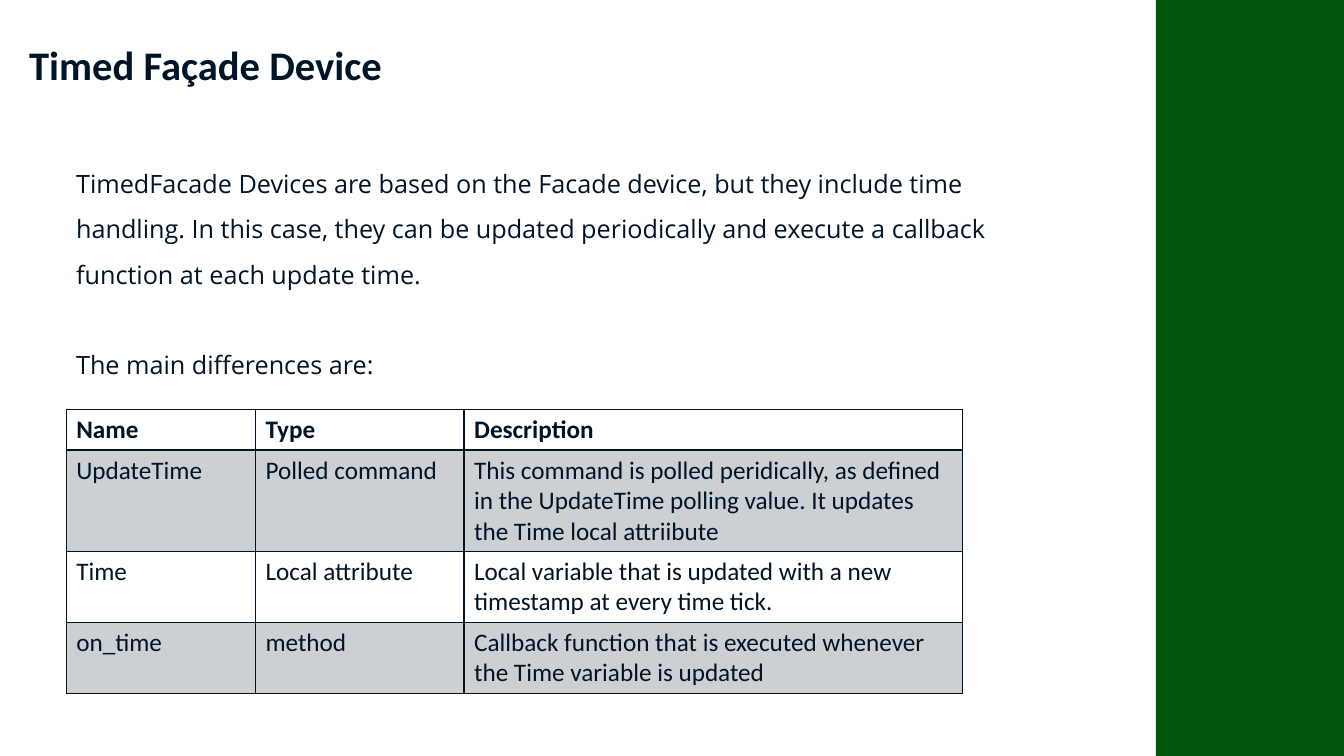
from dataclasses import dataclass

from lxml import etree
from pptx import Presentation
from pptx.dml.color import RGBColor
from pptx.enum.shapes import MSO_SHAPE
from pptx.enum.text import MSO_AUTO_SIZE
from pptx.oxml.ns import qn
from pptx.slide import Slide
from pptx.table import _Cell
from pptx.text.text import _Paragraph
from pptx.util import Pt

RECTANGLE = MSO_SHAPE.RECTANGLE
GROW = MSO_AUTO_SIZE.SHAPE_TO_FIT_TEXT
COLORS = {"ink": "001427", "band": "00570C"}
HEADING_FONT, BODY_FONT = "Calibri", "Open Sans"
SLIDE_WIDTH, SLIDE_HEIGHT = 960, 540
BAND_LEFT = 825.7
COLUMN_WIDTHS = (135.2, 149, 355.8)
HEADER_HEIGHT, EXTRA_LINE = 29.2, 21.5
BORDER_SIDES = ("a:lnL", "a:lnR", "a:lnT", "a:lnB")


@dataclass
class TextBlock:
    left: float
    top: float
    width: float
    height: float
    paragraphs: tuple[str, ...]
    font: str
    size: float
    line_spacing: float
    gap: float = 0
    bold: bool = False
    wrap: bool = True


@dataclass
class Row:
    cells: tuple[str, str, str]
    lines: int
    header: bool = False
    shaded: bool = False


TITLE = TextBlock(13.7, 28.8, 268.6, 38.9, ("Timed Façade Device",),
                  HEADING_FONT, 29, 0.9, bold=True, wrap=False)
INTRO = TextBlock(47.3, 105.8, 712.8, 167, (
    "TimedFacade Devices are based on the Facade device, but they include time "
    "handling. In this case, they can be updated periodically and execute a "
    "callback function at each update time.",
    "The main differences are:",
), BODY_FONT, 18, 1.5, gap=32.4)
ROWS = (
    Row(("Name", "Type", "Description"), 1, header=True),
    Row(("UpdateTime", "Polled command",
         "This command is polled peridically, as defined in the UpdateTime "
         "polling value. It updates the Time local attriibute"), 3, shaded=True),
    Row(("Time", "Local attribute",
         "Local variable that is updated with a new timestamp at every time tick."), 2),
    Row(("on_time", "method",
         "Callback function that is executed whenever the Time variable is updated"),
        2, shaded=True),
)


def style_runs(paragraph: _Paragraph, font: str, size: float, bold: bool) -> None:
    for run in paragraph.runs:
        run.font.name = font
        run.font.size = Pt(size)
        run.font.bold = bold
        run.font.color.rgb = RGBColor.from_string(COLORS["ink"])


def add_side_band(slide: Slide) -> None:
    band = slide.shapes.add_shape(RECTANGLE, Pt(BAND_LEFT), Pt(0),
                                  Pt(SLIDE_WIDTH - BAND_LEFT), Pt(SLIDE_HEIGHT))
    band.shadow.inherit = False
    band.fill.solid()
    band.fill.fore_color.rgb = RGBColor.from_string(COLORS["band"])
    band.line.fill.background()


def add_text_block(slide: Slide, block: TextBlock) -> None:
    box = slide.shapes.add_textbox(Pt(block.left), Pt(block.top),
                                   Pt(block.width), Pt(block.height))
    frame = box.text_frame
    frame.word_wrap = block.wrap
    frame.auto_size = GROW
    frame.text = "\n".join(block.paragraphs)
    for index, paragraph in enumerate(frame.paragraphs):
        paragraph.line_spacing = block.line_spacing
        if index:
            paragraph.space_before = Pt(block.gap)
        style_runs(paragraph, block.font, block.size, block.bold)


def set_borders(cell: _Cell, bottom_width: float) -> None:
    """Outline the cell in ink, 1 pt wide except along the bottom."""
    properties = cell._tc.get_or_add_tcPr()
    for position, side in enumerate(BORDER_SIDES):
        width = bottom_width if side == "a:lnB" else 1
        line = etree.Element(qn(side), w=str(Pt(width)))
        fill = etree.SubElement(line, qn("a:solidFill"))
        etree.SubElement(fill, qn("a:srgbClr"), val=COLORS["ink"])
        properties.insert(position, line)


def shade(cell: _Cell) -> None:
    """Fill the cell with ink at 20 % opacity."""
    cell.fill.solid()
    cell.fill.fore_color.rgb = RGBColor.from_string(COLORS["ink"])
    color = cell._tc.tcPr.find(qn("a:solidFill")).find(qn("a:srgbClr"))
    etree.SubElement(color, qn("a:alpha"), val="20000")


def add_differences_table(slide: Slide) -> None:
    heights = [HEADER_HEIGHT + EXTRA_LINE * (row.lines - 1) for row in ROWS]
    table = slide.shapes.add_table(len(ROWS), len(COLUMN_WIDTHS), Pt(47.3), Pt(292.3),
                                   Pt(sum(COLUMN_WIDTHS)), Pt(sum(heights))).table
    table.first_row = table.horz_banding = False
    for column, width in zip(table.columns, COLUMN_WIDTHS):
        column.width = Pt(width)
    for table_row, height, row in zip(table.rows, heights, ROWS):
        table_row.height = Pt(height)
        for cell, text in zip(table_row.cells, row.cells):
            cell.text_frame.text = text
            style_runs(cell.text_frame.paragraphs[0], HEADING_FONT, 18, row.header)
            if row.shaded:
                shade(cell)
            else:
                cell.fill.background()
            set_borders(cell, 2 if row.header else 1)


def main() -> None:
    presentation = Presentation()
    presentation.slide_width = Pt(SLIDE_WIDTH)
    presentation.slide_height = Pt(SLIDE_HEIGHT)
    slide = presentation.slides.add_slide(presentation.slide_layouts[6])
    add_side_band(slide)
    add_text_block(slide, TITLE)
    add_text_block(slide, INTRO)
    add_differences_table(slide)
    presentation.save("out.pptx")


if __name__ == "__main__":
    main()
